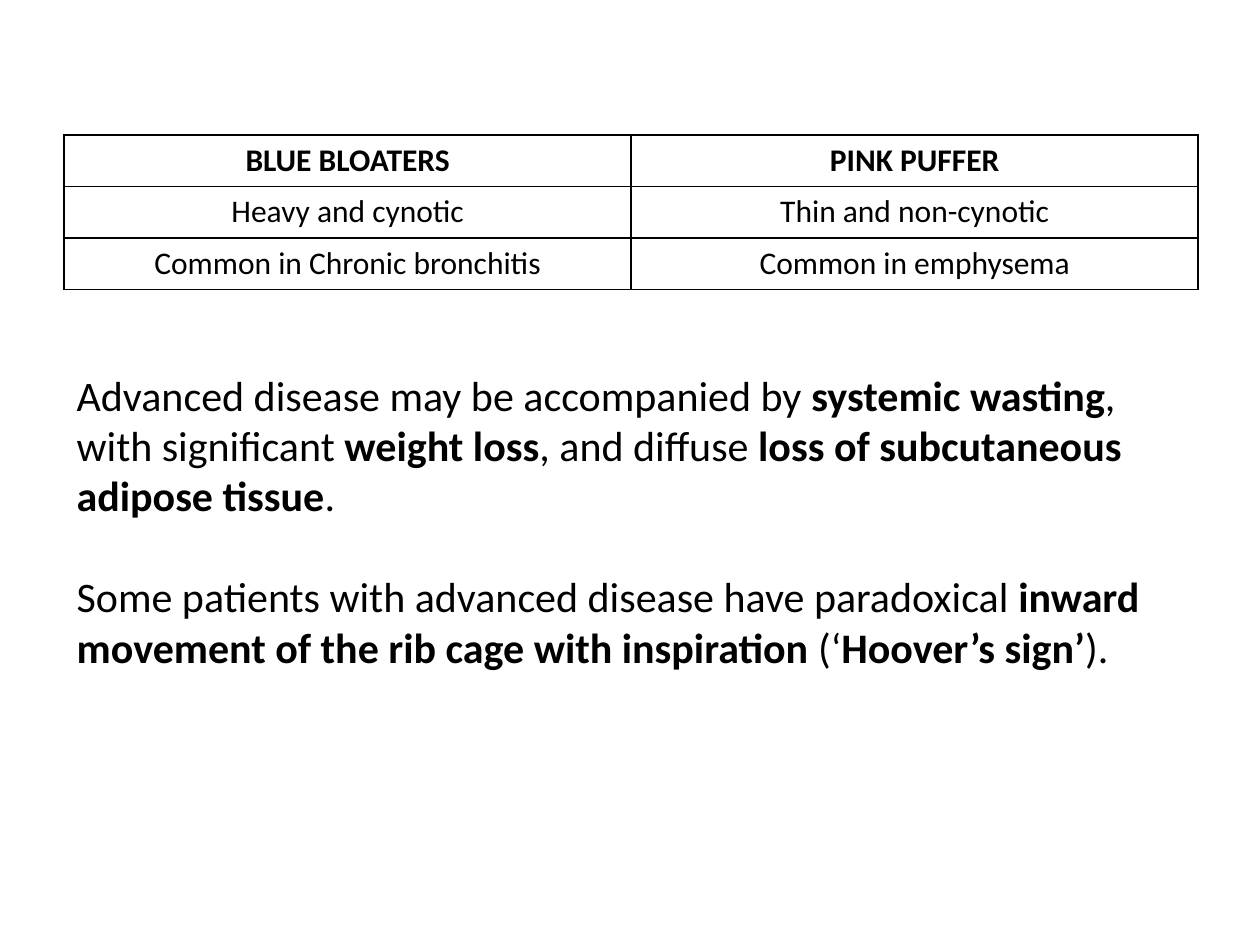
import pptx
import pptx.util
import pptx.dml.color
import pptx.enum.text
import pptx.oxml
from lxml import etree

Inches, Pt = pptx.util.Inches, pptx.util.Pt

# Content
ROWS = [
    ("BLUE BLOATERS", "PINK PUFFER"),
    ("Heavy and cynotic", "Thin and non-cynotic"),
    ("Common in Chronic bronchitis", "Common in emphysema"),
]
# Each paragraph alternates plain and bold text
NOTES = [
    ("Advanced disease may be accompanied by ", "systemic wasting",
     ", with significant ", "weight loss", ", and diffuse ",
     "loss of subcutaneous adipose tissue", "."),
    ("Some patients with advanced disease have paradoxical ",
     "inward movement of the rib cage with inspiration",
     " (‘", "Hoover’s sign’", ")."),
]
FONT, INK = "Calibri", "000000"
LEFT, WIDTH, ROW_H = 0.51, 9, 0.41
BORDER = (
    '<a:{side} xmlns:a="http://schemas.openxmlformats.org/drawingml/2006/main" w="12700">'
    '<a:solidFill><a:srgbClr val="{ink}"/></a:solidFill></a:{side}>'
)


def style(font, size, color=INK):
    font.name = FONT
    font.size = Pt(size)
    font.color.rgb = pptx.dml.color.RGBColor.from_string(color)


def frame(cell):
    props = cell._tc.get_or_add_tcPr()
    for spot, side in enumerate(("lnL", "lnR", "lnT", "lnB")):
        props.insert(spot, pptx.oxml.parse_xml(BORDER.format(side=side, ink=INK)))


deck = pptx.Presentation()
deck.slide_width, deck.slide_height = Inches(10), Inches(7.5)
slide = deck.slides.add_slide(deck.slide_layouts[6])

# Comparison table
grid = slide.shapes.add_table(
    len(ROWS), len(ROWS[0]), Inches(LEFT), Inches(1.07),
    Inches(WIDTH), Inches(ROW_H * len(ROWS))).table
grid.horz_banding = False
for r, row in enumerate(ROWS):
    grid.rows[r].height = Inches(ROW_H)
    for c, words in enumerate(row):
        cell = grid.cell(r, c)
        cell.text = words
        cell.fill.background()
        frame(cell)
        para = cell.text_frame.paragraphs[0]
        para.alignment = pptx.enum.text.PP_ALIGN.CENTER
        style(para.font, 18)
        para.font.bold = r == 0

# Notes below the table
body = slide.shapes.add_textbox(
    Inches(LEFT), Inches(2.88), Inches(8.98), Inches(2.93)).text_frame
body.word_wrap = True
for n, parts in enumerate(NOTES):
    para = body.add_paragraph() if n else body.paragraphs[0]
    if n:
        para.space_before = Pt(29)
    style(para.font, 24)
    for i, words in enumerate(parts):
        run = para.add_run()
        run.text = words
        run.font.bold = i % 2 == 1

deck.save("out.pptx")
